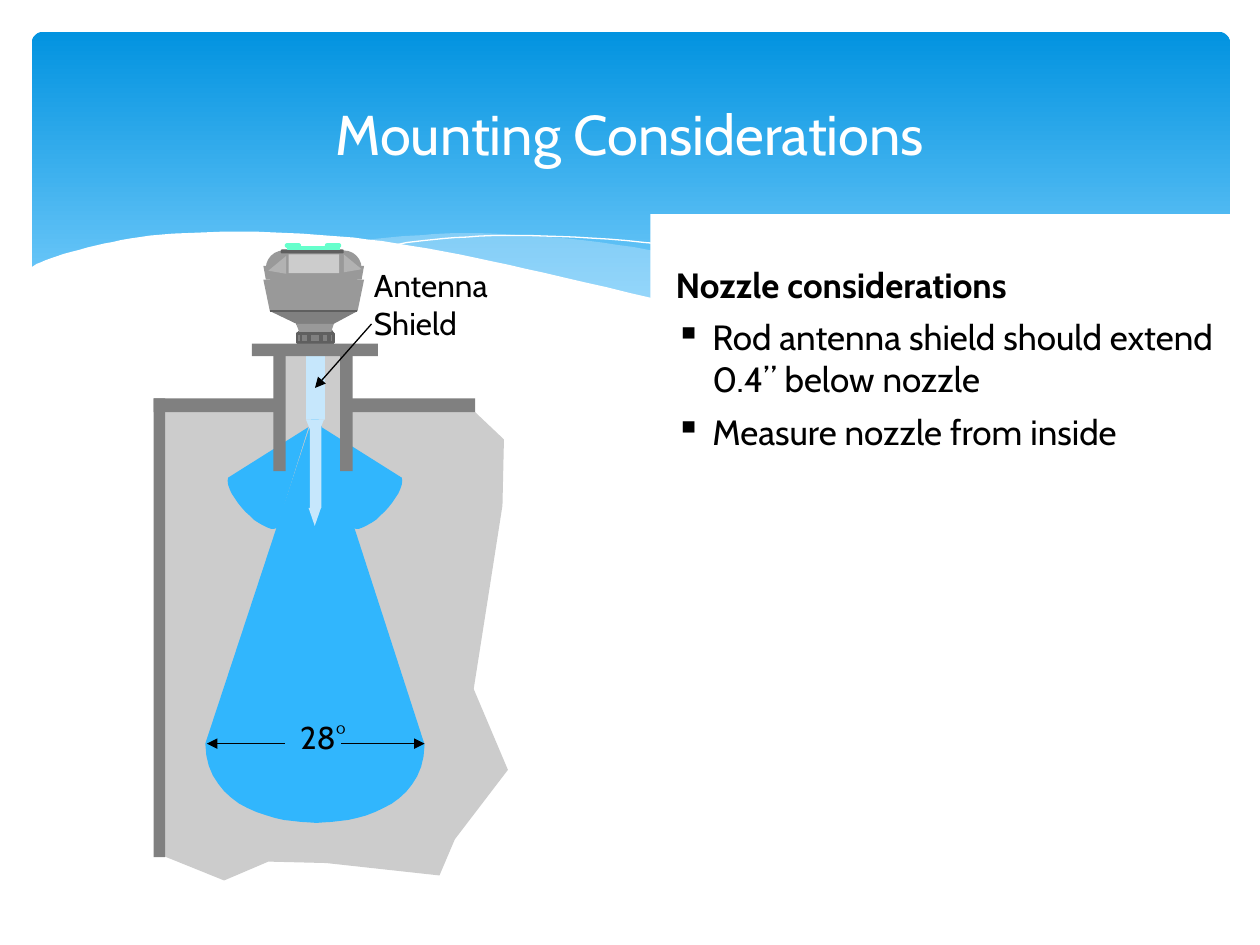
from dataclasses import dataclass
from functools import singledispatch
from typing import Optional

from lxml.etree import SubElement
from pptx import Presentation
from pptx.dml.color import RGBColor
from pptx.enum.dml import MSO_PATTERN
from pptx.enum.shapes import MSO_CONNECTOR, MSO_SHAPE as Preset
from pptx.enum.text import MSO_ANCHOR, MSO_AUTO_SIZE, PP_ALIGN
from pptx.oxml.ns import qn
from pptx.util import Cm, Pt

COLOURS = {
    "sky": "0293E0", "sky light": "83D3FE", "pale": "C6E7FC", "beam": "31B6FD",
    "white": "FFFFFF", "black": "000000", "steel": "808080", "edge": "5F5F5F",
    "housing": "999999", "facet": "B2B2B2", "vessel": "CCCCCC", "mint": "66FFCC",
}
RECT, ROUND = Preset.RECTANGLE, Preset.ROUNDED_RECTANGLE
TRIANGLE, RIGHT_TRIANGLE = Preset.ISOSCELES_TRIANGLE, Preset.RIGHT_TRIANGLE
AXIS = 2.5
Point = tuple[float, float]


@dataclass
class Part:
    box: tuple[float, float, float, float]
    fill: str = "steel"
    preset: int = RECT
    adjust: Optional[float] = None
    turn: float = 0
    flip: bool = False
    edge: float = 0


@dataclass
class Outline:
    points: list[Point]
    fill: Optional[str] = None
    alpha: int = 100
    striped: bool = False


@dataclass
class Line:
    start: Point
    end: Point
    colour: str = "edge"
    width: float = 0.75
    arrow: bool = False


@dataclass
class Label:
    words: str
    box: tuple[float, float, float, float]
    size: int
    colour: str
    frame: dict
    align: int = PP_ALIGN.LEFT


def length(inches: float) -> Cm:
    return Cm(round(inches * 2.54, 2))


def rgb(name: str) -> RGBColor:
    return RGBColor.from_string(COLOURS[name])


def apply(target, values: dict) -> None:
    for name, value in values.items():
        setattr(target, name, value)


def margins(left: float, top: float, right: float, bottom: float) -> dict:
    return {"margin_left": length(left), "margin_top": length(top),
            "margin_right": length(right), "margin_bottom": length(bottom)}


def bezier(a: Point, b: Point, c: Point, d: Point, steps: int = 16) -> list[Point]:
    ts = [i / steps for i in range(steps + 1)]
    return [tuple((1 - t)**3 * p + 3 * t * (1 - t)**2 * q + 3 * t * t * (1 - t) * r + t**3 * s
                  for p, q, r, s in zip(a, b, c, d)) for t in ts]


def smooth(knots: list[Point]) -> list[Point]:
    """Sample a Catmull-Rom curve through the knots."""
    ends = [knots[0], *knots, knots[-1]]
    curve = [knots[0]]
    for before, a, b, after in zip(ends, ends[1:], ends[2:], ends[3:]):
        leave = tuple(p + (q - o) / 6 for o, p, q in zip(before, a, b))
        arrive = tuple(q - (r - p) / 6 for p, q, r in zip(a, b, after))
        curve += bezier(a, leave, arrive, b, 6)[1:]
    return curve


def mirror(points: list[Point]) -> list[Point]:
    return [(2 * AXIS - x, y) for x, y in points]


def style_run(run, size: int, colour: str, bold: bool = False) -> None:
    apply(run.font, {"name": "Cabin", "size": Pt(size), "bold": bold})
    run.font.color.rgb = rgb(colour)


@singledispatch
def draw(item, shapes):
    raise TypeError(item)


@draw.register
def draw_part(part: Part, shapes):
    shape = shapes.add_shape(part.preset, *map(length, part.box))
    apply(shape, {"rotation": part.turn})
    shape.shadow.inherit = False
    if part.adjust is not None:
        shape.adjustments[0] = part.adjust
    if part.flip:
        shape._element.spPr.xfrm.set("flipH", "1")
    shape.fill.solid()
    shape.fill.fore_color.rgb = rgb(part.fill)
    if part.edge:
        shape.line.color.rgb = rgb("edge")
        shape.line.width = Pt(part.edge)
    else:
        shape.line.fill.background()
    return shape


@draw.register
def draw_outline(outline: Outline, shapes):
    first, *rest = [(length(x), length(y)) for x, y in outline.points]
    builder = shapes.build_freeform(*first)
    builder.add_line_segments(rest, close=outline.fill is not None)
    shape = builder.convert_to_shape()
    shape.shadow.inherit = False
    if outline.fill is None:
        shape.fill.background()
        shape.line.color.rgb = rgb("white")
        shape.line.width = Pt(0)
        return
    shape.line.fill.background()
    if outline.striped:
        shape.fill.patterned()
        shape.fill.pattern = MSO_PATTERN.NARROW_HORIZONTAL
        shape.fill.fore_color.rgb = rgb("pale")
        shape.fill.back_color.rgb = rgb(outline.fill)
        return
    shape.fill.solid()
    shape.fill.fore_color.rgb = rgb(outline.fill)
    if outline.alpha < 100:
        colour = shape._element.spPr.find(qn("a:solidFill"))[0]
        SubElement(colour, qn("a:alpha")).set("val", str(outline.alpha * 1000))


@draw.register
def draw_line(line: Line, shapes):
    ends = map(length, (*line.start, *line.end))
    connector = shapes.add_connector(MSO_CONNECTOR.STRAIGHT, *ends)
    connector.line.color.rgb = rgb(line.colour)
    connector.line.width = Pt(line.width)
    if line.arrow:
        SubElement(connector.line._get_or_add_ln(), qn("a:tailEnd")).set("type", "triangle")
    SubElement(connector._element.spPr, qn("a:effectLst"))


@draw.register
def draw_label(label: Label, shapes):
    frame = shapes.add_textbox(*map(length, label.box)).text_frame
    apply(frame, {"word_wrap": True, **label.frame})
    paragraph = frame.paragraphs[0]
    paragraph.alignment = label.align
    run = paragraph.add_run()
    run.text = label.words
    style_run(run, label.size, label.colour)


def write_advice(shapes, heading: str, points: list[str]) -> None:
    frame = draw(Part((5.16, 1.7, 4.84, 5.2), "white"), shapes).text_frame
    apply(frame, {"word_wrap": True, "vertical_anchor": MSO_ANCHOR.TOP, **margins(0.2, 0.39, 0.2, 0.2)})
    for number, words in enumerate([heading, *points]):
        paragraph = frame.add_paragraph() if number else frame.paragraphs[0]
        if number:
            properties = paragraph._p.get_or_add_pPr()
            properties.set("marL", str(length(0.29)))
            properties.set("indent", str(-length(0.29)))
            SubElement(properties, qn("a:buChar")).set("char", "▪")
            apply(paragraph, {"level": 1, "space_before": Pt(6)})
        paragraph.alignment = PP_ALIGN.LEFT
        run = paragraph.add_run()
        run.text = words
        style_run(run, 20, "black", bold=number == 0)


BACK_WAVE = (
    smooth([(8.93, 2.73), (8.07, 2.6), (7.06, 2.4), (6.29, 2.22), (5.41, 2.03), (4.65, 1.91),
            (3.8, 1.85), (3.28, 1.87), (2.86, 1.91)])
    + smooth([(2.86, 1.91), (3.62, 2.03), (4.49, 2.22), (5.66, 2.48), (6.5, 2.64), (7.22, 2.74),
              (7.96, 2.78), (8.48, 2.77), (8.93, 2.73)]))
CREST = smooth([(3.09, 1.95), (3.44, 1.9), (4.01, 1.87), (4.69, 1.89), (5.56, 1.97), (6.36, 2.08),
                (7.27, 2.26), (8.31, 2.51), (9.07, 2.72)])
FRONT_WAVE = smooth([(9.77, 2.46), (9.3, 2.62), (8.75, 2.73), (8.09, 2.77), (7.26, 2.72), (6.48, 2.62),
                     (5.55, 2.45), (4.47, 2.2), (3.65, 2.02), (2.92, 1.9), (2.3, 1.85), (1.77, 1.84),
                     (1.19, 1.87), (0.76, 1.95), (0.4, 2.05), (0.23, 2.13)]) + [(0.23, 3.29), (9.77, 3.29)]
WAVES = [Outline(BACK_WAVE, "pale", alpha=40), Outline(CREST), Outline(FRONT_WAVE, "white")]

VESSEL = [(1.27, 3.21), (1.31, 6.8), (1.78, 6.99), (2.13, 6.84), (2.59, 6.85), (3.49, 6.95), (3.61, 6.66),
          (4.03, 6.11), (3.76, 5.47), (3.89, 4.64), (3.99, 4.01), (4, 3.49), (3.77, 3.27)]
CONE = ([(2.46, 3.38)] + bezier((1.63, 5.9), (1.64, 6.43), (2.22, 6.53), (2.51, 6.53))
        + bezier((2.51, 6.53), (2.8, 6.53), (3.36, 6.43), (3.37, 5.91)) + [(2.55, 3.38), (2.49, 3.23)])
LOBE = [(2.55, 3.39)] + bezier((2.8, 4.19), (2.91, 4.25), (3.23, 3.92), (3.19, 3.79))
GROW = {"auto_size": MSO_AUTO_SIZE.SHAPE_TO_FIT_TEXT}

TANK = [
    Outline(VESSEL, "vessel"),
    Part((2.22, 2.81, 0.54, 0.74), "vessel"),
    Outline(CONE, "beam"),
    Line((2.71, 5.9), (3.37, 5.9), "black", arrow=True),
    Line((2.26, 5.9), (1.64, 5.9), "black", arrow=True),
    Label("28°", (2.18, 5.55, 0.82, 0.73), 18, "black",
          {**margins(0.2, 0.2, 0.2, 0.2), **GROW, "word_wrap": False}),
    Outline(LOBE, "beam"),
    Outline(mirror(LOBE), "beam"),
    *[Part((x, 2.74, 0.1, 1)) for x in (2.17, 2.7)],
    *[Part((x, 3.16, 1, 0.11)) for x in (1.22, 2.77)],
    Part((1.22, 3.16, 0.09, 3.64)),
    Label("Antenna Shield", (2.87, 2.06, 1.6, 0.7), 18, "black", {**margins(0.1, 0.05, 0.1, 0.05), **GROW}),
]
SENSOR = [
    Part((2.57, 2.57, 0.07, 0.06), preset=RIGHT_TRIANGLE, turn=90, flip=True, edge=1.5),
    Part((2.37, 2.57, 0.07, 0.07), preset=RIGHT_TRIANGLE, turn=270, edge=1.5),
    Part((2.43, 2.77, 0.15, 0.56), "pale"),
    Part((2.43, 3.33, 0.14, 0.18), "pale", TRIANGLE, turn=180),
    *[Part((x, 1.93, 0.13, 0.04), "mint", ROUND, 0.5) for x in (2.26, 2.58)],
    Outline([(2.09, 2.22), (2.14, 2.47), (2.84, 2.47), (2.89, 2.22)], "housing"),
    Outline([(2.09, 2.11), (2.11, 2.22), (2.87, 2.22), (2.89, 2.11)], "housing"),
    Part((2.11, 1.99, 0.76, 0.28), "housing", ROUND, 0.5),
    Part((2.29, 2.02, 0.4, 0.15), "vessel"),
    Part((2.73, 2.02, 0.14, 0.14), "facet", TRIANGLE, 0.83, turn=90),
    Part((2.13, 2.03, 0.14, 0.14), "facet", TRIANGLE, 0.83, turn=270, flip=True),
    Part((2.23, 1.98, 0.5, 0.03), "edge", ROUND, 0.3),
    Line((2.28, 1.97), (2.7, 1.97), "mint", 2.25),
    Part((2.46, 3.39, 0.09, 0.64), "pale"),
    Part((2.45, 4.03, 0.1, 0.14), "pale", TRIANGLE, turn=180),
    Part((2.14, 2.47, 0.31, 0.15), preset=RIGHT_TRIANGLE, turn=180),
    Part((2.56, 2.47, 0.28, 0.15), preset=RIGHT_TRIANGLE, turn=180, flip=True),
    Part((2.35, 2.47, 0.29, 0.11)),
    *[Line((a, 2.47), (b, 2.47)) for a, b in ((2.14, 2.35), (2.65, 2.83), (2.35, 2.65))],
    Outline([(2.35, 2.57), (2.39, 2.67), (2.62, 2.67), (2.65, 2.57)], "housing"),
    Outline([(2.38, 2.69), (2.41, 2.8), (2.59, 2.8), (2.62, 2.69)], "housing", striped=True),
    *[Part((x, 2.65, width, 0.07), edge=1.5)
      for x, width in ((2.46, 0.08), (2.55, 0.06), (2.39, 0.06), (2.62, 0.03), (2.36, 0.03))],
    *[Line((2.36, y), (2.65, y), width=1.5) for y in (2.72, 2.64)],
    Part((2, 2.73, 1, 0.1)),
    Line((2.95, 2.57), (2.5, 3.08), "black", arrow=True),
]
TITLE = Label("Mounting Considerations", (0.5, 0.37, 9, 1.37), 32, "white",
              {"vertical_anchor": MSO_ANCHOR.MIDDLE}, PP_ALIGN.CENTER)


def main() -> None:
    deck = Presentation()
    apply(deck, {"slide_width": Cm(25.4), "slide_height": Cm(19.05)})
    shapes = deck.slides.add_slide(deck.slide_layouts[6]).shapes
    banner = draw(Part((0.25, 0.25, 9.51, 2.7), "sky", ROUND, 0.034), shapes)
    banner.fill.gradient()
    banner.fill.gradient_angle = 270
    for stop, position, colour in zip(banner.fill.gradient_stops, (0, 0.9), ("sky", "sky light")):
        stop.position = position
        stop.color.rgb = rgb(colour)
    for items in (WAVES, [TITLE], TANK + SENSOR):
        layer = shapes.add_group_shape().shapes if len(items) > 1 else shapes
        for item in items:
            draw(item, layer)
    write_advice(shapes, "Nozzle considerations",
                 ["Rod antenna shield should extend 0.4” below nozzle", "Measure nozzle from inside"])
    deck.save("out.pptx")


if __name__ == "__main__":
    main()
